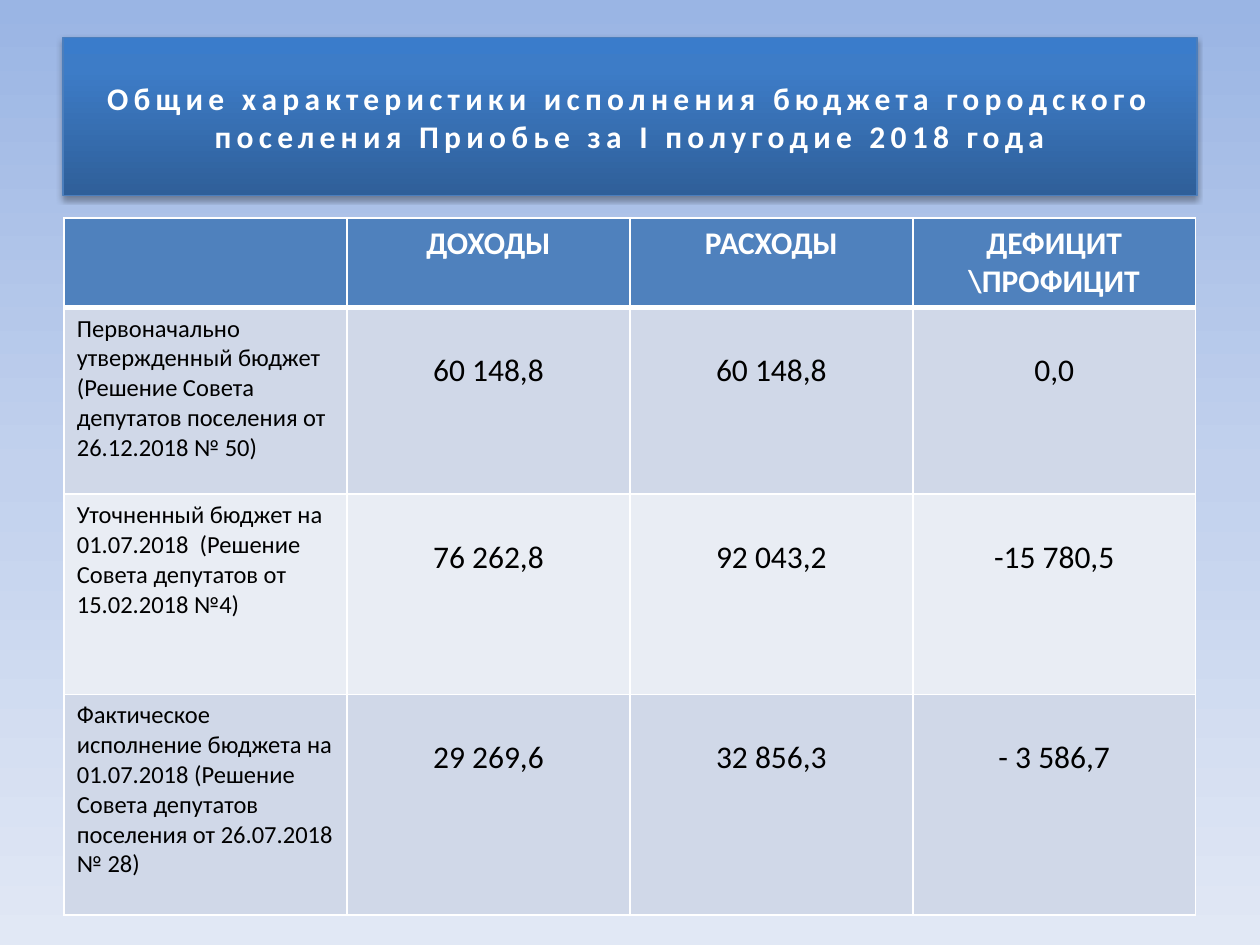
from lxml.etree import SubElement
from pptx import Presentation
from pptx.dml.color import RGBColor
from pptx.enum.shapes import MSO_SHAPE
from pptx.enum.text import MSO_ANCHOR, PP_ALIGN
from pptx.oxml import parse_xml
from pptx.oxml.ns import nsdecls, qn
from pptx.util import Inches, Pt

COLORS = {
    "white": "FFFFFF", "black": "000000", "title_line": "4B7EBC",
    "header": "4F81BD", "band_dark": "D0D8E8", "band_light": "E9EDF4",
}
BACKGROUND_STOPS = [(0, "9AB5E4"), (50, "C2D1ED"), (100, "E1E8F5")]
TITLE_STOPS = [(0, "2F5F99"), (80, "3D7CC7"), (100, "3A7CCB")]

TITLE = ("Общие характеристики исполнения бюджета городского поселения "
         "Приобье за I полугодие 2018 года")
HEADERS = ["", "ДОХОДЫ", "РАСХОДЫ", "ДЕФИЦИТ \\ПРОФИЦИТ"]
BUDGETS = [
    ["Первоначально утвержденный бюджет (Решение Совета депутатов поселения "
     "от 26.12.2018 № 50)", "60 148,8", "60 148,8", "0,0"],
    ["Уточненный бюджет на 01.07.2018  (Решение Совета депутатов от "
     "15.02.2018 №4)", "76 262,8", "92 043,2", "-15 780,5"],
    ["Фактическое исполнение бюджета на 01.07.2018 (Решение Совета депутатов "
     "поселения от 26.07.2018 № 28)", "29 269,6", "32 856,3", "- 3 586,7"],
]
ROW_HEIGHTS = [0.7, 1.48, 1.59, 1.75]


def rgb(name):
    return RGBColor.from_string(COLORS[name])


def write_text(tf, text, size=18, color="black", bold=False,
               align=PP_ALIGN.CENTER, spacing=0):
    """Fill the first paragraph; spacing is the letter spacing in points."""
    p = tf.paragraphs[0]
    p.alignment = align
    r = p.add_run()
    r.text = text
    r.font.name = "Calibri"
    r.font.size = Pt(size)
    r.font.bold = bold
    r.font.color.rgb = rgb(color)
    if spacing:
        r.font._element.set("spc", str(spacing * 100))


def set_gradient(fill, parent, stops, angle):
    """Give parent a linear gradient; angle is clockwise in degrees."""
    fill.solid()
    stops_xml = "".join(
        f'<a:gs pos="{pos * 1000}"><a:srgbClr val="{color}"/></a:gs>'
        for pos, color in stops)
    gradient = parse_xml(
        f'<a:gradFill {nsdecls("a")} rotWithShape="1"><a:gsLst>{stops_xml}'
        f'</a:gsLst><a:lin ang="{angle * 60000}" scaled="0"/></a:gradFill>')
    parent.replace(parent.find(qn("a:solidFill")), gradient)


def set_borders(cell, **widths):
    """Draw white cell borders; keys are the sides L, R, T, B in points."""
    tc_pr = cell._tc.get_or_add_tcPr()
    for i, (side, width) in enumerate(widths.items()):
        ln = parse_xml(
            f'<a:ln{side} {nsdecls("a")} w="{Pt(width)}"><a:solidFill>'
            f'<a:srgbClr val="{COLORS["white"]}"/></a:solidFill></a:ln{side}>')
        tc_pr.insert(i, ln)


class SlideBuilder:
    """Holds the current slide and draws the styled elements on it."""

    def __init__(self, slide):
        self.slide = slide

    def background(self, stops):
        fill = self.slide.background.fill
        fill.solid()
        bg_pr = self.slide.element.find(".//" + qn("p:bgPr"))
        set_gradient(fill, bg_pr, stops, 90)

    def title(self, text, left, top, width, height):
        sp = self.slide.shapes.add_shape(
            MSO_SHAPE.RECTANGLE, Inches(left), Inches(top),
            Inches(width), Inches(height))
        sp_pr = sp._element.spPr
        set_gradient(sp.fill, sp_pr, TITLE_STOPS, 270)
        sp.line.color.rgb = rgb("title_line")
        sp.line.width = Pt(0.75)
        sp.shadow.inherit = False
        shadow = SubElement(
            sp_pr.find(qn("a:effectLst")), qn("a:outerShdw"),
            blurRad=str(Pt(3.1)), dist=str(Pt(1.8)), dir="5400000",
            rotWithShape="0")
        color = SubElement(shadow, qn("a:srgbClr"), val=COLORS["black"])
        SubElement(color, qn("a:alpha"), val="35000")
        tf = sp.text_frame
        tf.word_wrap = True
        tf.vertical_anchor = MSO_ANCHOR.MIDDLE
        write_text(tf, text, color="white", bold=True, spacing=3)

    def table(self, rows, left, top, width, heights):
        table = self.slide.shapes.add_table(
            len(rows), len(rows[0]), Inches(left), Inches(top),
            Inches(width), Inches(sum(heights))).table
        for row, height in zip(table.rows, heights):
            row.height = Inches(height)
        for i, texts in enumerate(rows):
            for j, text in enumerate(texts):
                self.cell(table.cell(i, j), text, i, j)

    def cell(self, cell, text, i, j):
        fill = "header" if i == 0 else "band_dark" if i % 2 else "band_light"
        cell.fill.solid()
        cell.fill.fore_color.rgb = rgb(fill)
        set_borders(cell, L=1, R=1, T=3 if i == 1 else 1, B=3 if i == 0 else 1)
        if i == 0:
            if text:
                write_text(cell.text_frame, text, color="white", bold=True)
        elif j == 0:
            write_text(cell.text_frame, text, size=14, align=PP_ALIGN.LEFT)
        else:
            cell.margin_top = Inches(0.35)
            write_text(cell.text_frame, text)


def main():
    prs = Presentation()
    prs.slide_width, prs.slide_height = Inches(10), Inches(7.5)
    s = SlideBuilder(prs.slides.add_slide(prs.slide_layouts[6]))
    s.background(BACKGROUND_STOPS)
    s.title(TITLE, 0.5, 0.3, 9, 1.25)
    s.table([HEADERS] + BUDGETS, 0.51, 1.73, 8.98, ROW_HEIGHTS)
    prs.save("out.pptx")


if __name__ == "__main__":
    main()
